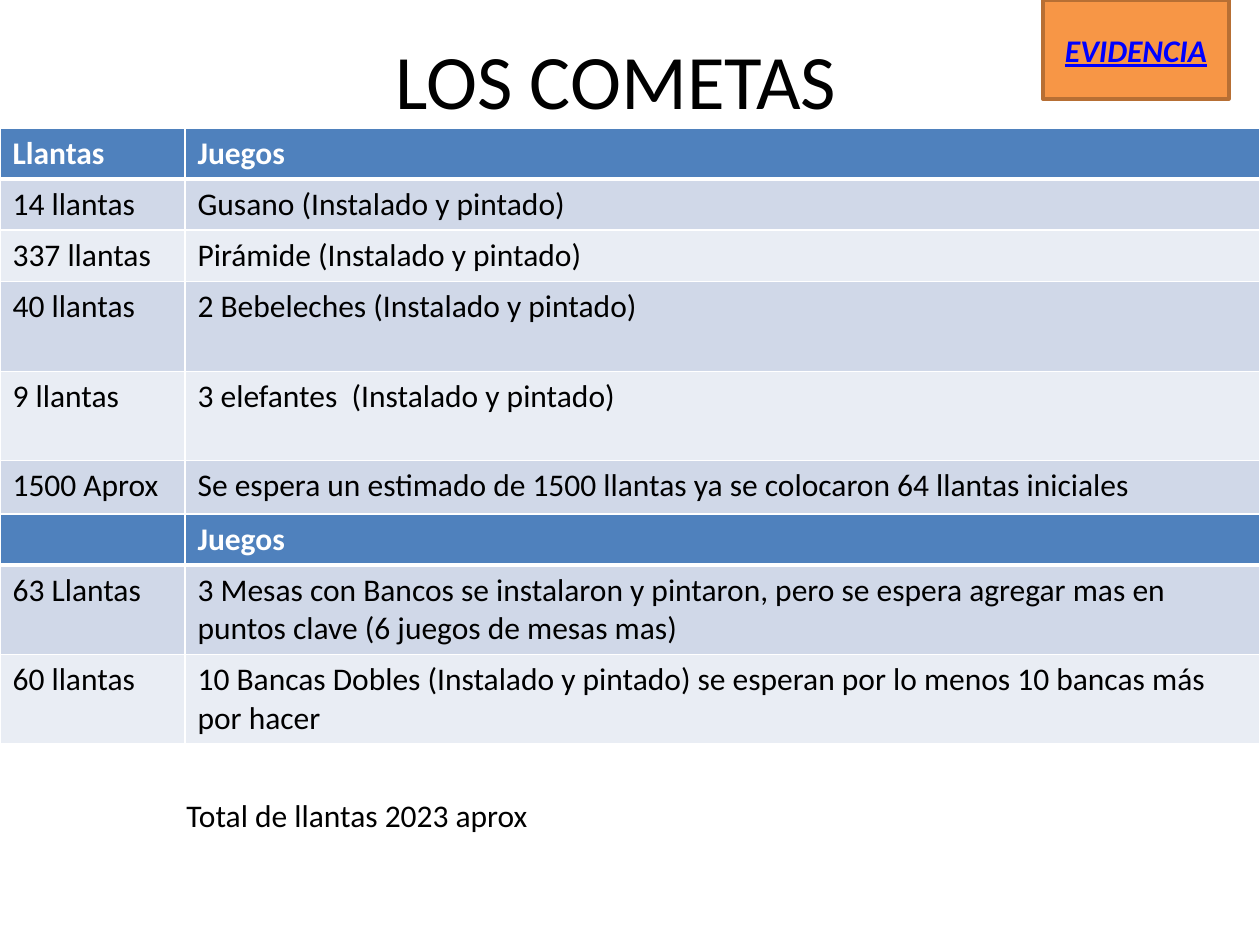
from pptx import Presentation
from pptx.dml.color import RGBColor as RGB
from pptx.enum.shapes import MSO_SHAPE as SHAPE
from pptx.enum.text import MSO_ANCHOR as ANCHOR, PP_ALIGN as ALIGN
from pptx.oxml import parse_xml
from pptx.oxml.ns import nsdecls
from pptx.util import Pt

PX = 914400 / 126
FONT = "Calibri"
COLORS = {
    "white": "FFFFFF", "black": "000000", "header": "4F81BD",
    "odd": "D0D8E8", "even": "E9EDF4",
    "button": "F79646", "button_line": "B76F34", "link": "0000FF",
}
COLUMNS = [185, 1075]
TIRES = [
    ("Llantas", "Juegos"),
    ("14 llantas", "Gusano (Instalado y pintado)"),
    ("337 llantas", "Pirámide (Instalado y pintado)"),
    ("40 llantas", "2 Bebeleches (Instalado y pintado)"),
    ("9 llantas", "3 elefantes  (Instalado y pintado)"),
    ("1500 Aprox", "Se espera un estimado de 1500 llantas ya se colocaron "
                   "64 llantas iniciales"),
]
BENCHES = [
    ("", "Juegos"),
    ("63 Llantas", "3 Mesas con Bancos se instalaron y pintaron, pero se espera "
                   "agregar mas en puntos clave (6 juegos de mesas mas)"),
    ("60 llantas", "10 Bancas Dobles (Instalado y pintado) se esperan por lo "
                   "menos 10 bancas más por hacer"),
]


def px(*values):
    return [round(v * PX) for v in values]


def color(name):
    return RGB.from_string(COLORS[name])


def write(tf, text, size=18, fill="black", bold=False, italic=False,
          underline=False, align=ALIGN.LEFT):
    p = tf.paragraphs[0]
    p.alignment = align
    r = p.add_run()
    r.text = text
    font = r.font
    font.name, font.size = FONT, Pt(size)
    font.bold, font.italic, font.underline = bold, italic, underline
    font.color.rgb = color(fill)


def set_borders(cell, top, bottom):
    tc_pr = cell._tc.get_or_add_tcPr()
    for side, width in (("L", 1), ("R", 1), ("T", top), ("B", bottom)):
        tc_pr.append(parse_xml(
            f'<a:ln{side} {nsdecls("a")} w="{Pt(width)}"><a:solidFill>'
            f'<a:srgbClr val="{COLORS["white"]}"/></a:solidFill></a:ln{side}>'))


def add_table(slide, top, heights, rows):
    frame = slide.shapes.add_table(len(rows), len(COLUMNS),
                                   *px(0, top, sum(COLUMNS), sum(heights)))
    table = frame.table
    for column, width in zip(table.columns, px(*COLUMNS)):
        column.width = width
    for i, (height, texts) in enumerate(zip(px(*heights), rows)):
        table.rows[i].height = height
        header = i == 0
        fill = "header" if header else ("even", "odd")[i % 2]
        for cell, text in zip(table.rows[i].cells, texts):
            # Borders come before the fill in the cell properties
            set_borders(cell, 3 if i == 1 else 1, 3 if header else 1)
            cell.fill.solid()
            cell.fill.fore_color.rgb = color(fill)
            if text:
                write(cell.text_frame, text, bold=header,
                      fill="white" if header else "black")


def add_title(slide, text):
    sp = slide.shapes.title
    sp.left, sp.top, sp.width, sp.height = px(49, 0, 1134, 158)
    sp.text_frame.vertical_anchor = ANCHOR.MIDDLE
    write(sp.text_frame, text, size=44, align=ALIGN.CENTER)


def add_button(slide, text):
    sp = slide.shapes.add_shape(SHAPE.RECTANGLE, *px(1043, 0, 186, 99))
    sp.shadow.inherit = False
    sp.fill.solid()
    sp.fill.fore_color.rgb = color("button")
    sp.line.color.rgb = color("button_line")
    sp.line.width = Pt(2)
    sp.text_frame.vertical_anchor = ANCHOR.MIDDLE
    write(sp.text_frame, text, fill="link", bold=True, italic=True,
          underline=True, align=ALIGN.CENTER)


def add_note(slide, text):
    tf = slide.shapes.add_textbox(*px(174, 790, 370, 51)).text_frame
    tf.word_wrap = False
    write(tf, text)


def main():
    prs = Presentation()
    prs.slide_width, prs.slide_height = px(1260, 945)
    slide = prs.slides.add_slide(prs.slide_layouts[5])

    add_title(slide, "LOS COMETAS")
    # The second table covers the lower part of the first one's last row
    add_table(slide, 128, [51, 51, 51, 90, 89, 103], TIRES)
    add_table(slide, 514, [51, 89, 89], BENCHES)
    add_button(slide, "EVIDENCIA")
    add_note(slide, "Total de llantas 2023 aprox")

    prs.save("out.pptx")


if __name__ == "__main__":
    main()
